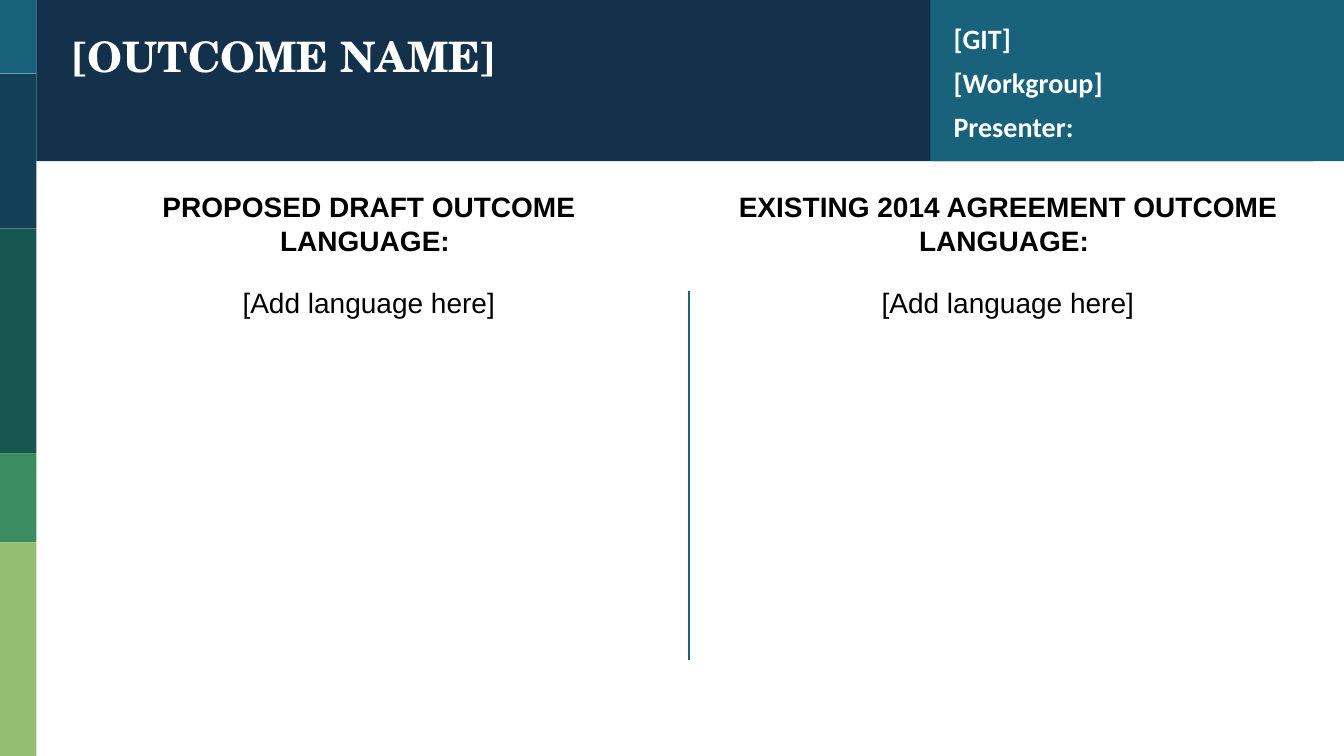
from pptx import Presentation
from pptx.dml.color import RGBColor
from pptx.enum.shapes import MSO_CONNECTOR, MSO_SHAPE
from pptx.enum.text import PP_ALIGN
from pptx.oxml.ns import qn
from pptx.util import Pt
from lxml import etree

RECT = MSO_SHAPE.RECTANGLE
STRAIGHT = MSO_CONNECTOR.STRAIGHT
LEFT, CENTER = PP_ALIGN.LEFT, PP_ALIGN.CENTER

THEME = {
    "navy": RGBColor.from_string("13314B"),
    "teal": RGBColor.from_string("18637B"),
    "white": RGBColor.from_string("FFFFFF"),
    "black": RGBColor.from_string("000000"),
    "bands": ["18637B", "124057", "165751", "3B8D61", "94BF6E"],
    "title_size": Pt(30),
    "body_size": Pt(20),
}
W, H = 960, 540

prs = Presentation()
prs.slide_width, prs.slide_height = Pt(W), Pt(H)
s = prs.slides.add_slide(prs.slide_layouts[6])


def add_block(x, y, w, h, color):
    sp = s.shapes.add_shape(RECT, Pt(x), Pt(y), Pt(w), Pt(h))
    sp.shadow.inherit = False
    sp.fill.solid()
    sp.fill.fore_color.rgb = color
    sp.line.fill.background()


def add_text(box, lines, font, para, inset):
    tf = s.shapes.add_textbox(*[Pt(v) for v in box]).text_frame
    tf.word_wrap = True
    tf.margin_left = tf.margin_right = Pt(inset[0])
    tf.margin_top = tf.margin_bottom = Pt(inset[1])
    for i, line in enumerate(lines):
        p = tf.paragraphs[0] if i == 0 else tf.add_paragraph()
        r = p.add_run()
        r.text = line
        for key, value in para.items():
            setattr(p, key, value)
        for key, value in font.items():
            if key == "color":
                r.font.color.rgb = value
            else:
                setattr(r.font, key, value)


# Side strip: each band runs down to the next one
tops = [0, 52.56, 163.44, 324, 387.36, H]
for top, bottom, color in zip(tops, tops[1:], THEME["bands"]):
    add_block(0, top, 26, bottom - top, RGBColor.from_string(color))

# Header with title
header_h = 115.2
header_font = {"color": THEME["white"], "bold": True}
add_block(26, 0, 912, header_h, THEME["navy"])
add_text((41.76, 15.12, 612, 90.72), ["[OUTCOME NAME]"],
         {**header_font, "name": "TeX Gyre Schola", "size": THEME["title_size"]},
         {"alignment": LEFT, "line_spacing": 1.05, "space_after": Pt(13.3)}, (9.36, 5.04))

# Header panel with group and presenter
add_block(664.56, 0, W - 664.56, header_h, THEME["teal"])
add_text((671.76, 9.36, 265, 92.16), ["[GIT]", "[Workgroup]", "Presenter:"],
         {**header_font, "name": "Calibri", "size": THEME["body_size"]},
         {"alignment": LEFT, "line_spacing": 1.05, "space_after": Pt(6)}, (9.36, 5.04))

# Two columns: heading above language
columns = [
    (47.52, "PROPOSED DRAFT OUTCOME LANGUAGE: "),
    (504, "EXISTING 2014 AGREEMENT OUTCOME LANGUAGE: "),
]
body_font = {"name": "Arial", "size": THEME["body_size"], "color": THEME["black"]}
for x, heading in columns:
    for y, h, text, bold in [(128.16, 59.76, heading, True),
                             (196.56, 327.6, "[Add language here]", False)]:
        add_text((x, y, 432, h), [text], {**body_font, "bold": bold},
                 {"alignment": CENTER}, (7.2, 7.2))

# Divider between the columns
divider = s.shapes.add_connector(STRAIGHT, Pt(492.2), Pt(208), Pt(492.2), Pt(471.6))
divider.line.color.rgb = THEME["teal"]
divider.line.width = Pt(1.5)
etree.SubElement(divider._element.spPr, qn("a:effectLst"))

prs.save("out.pptx")
